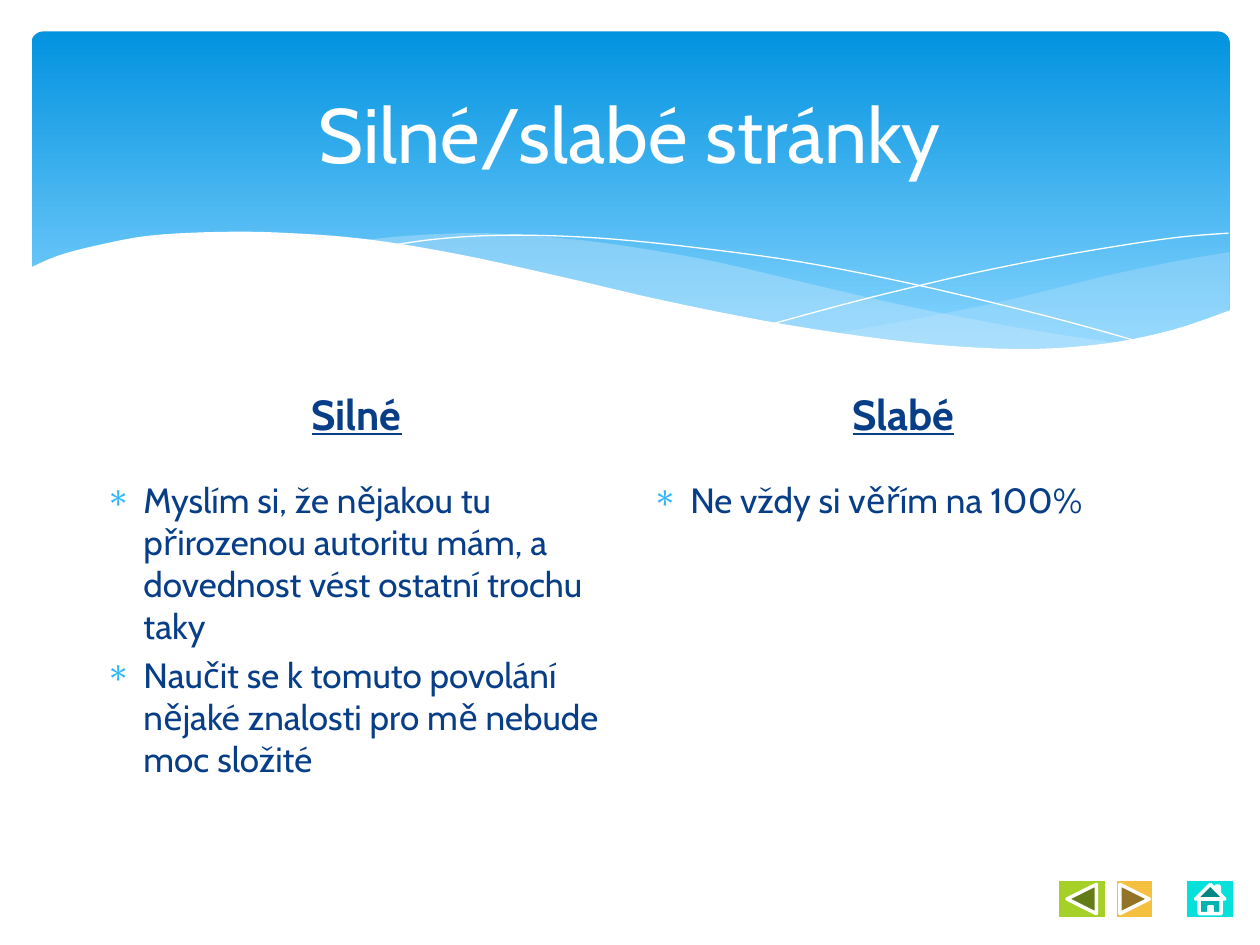
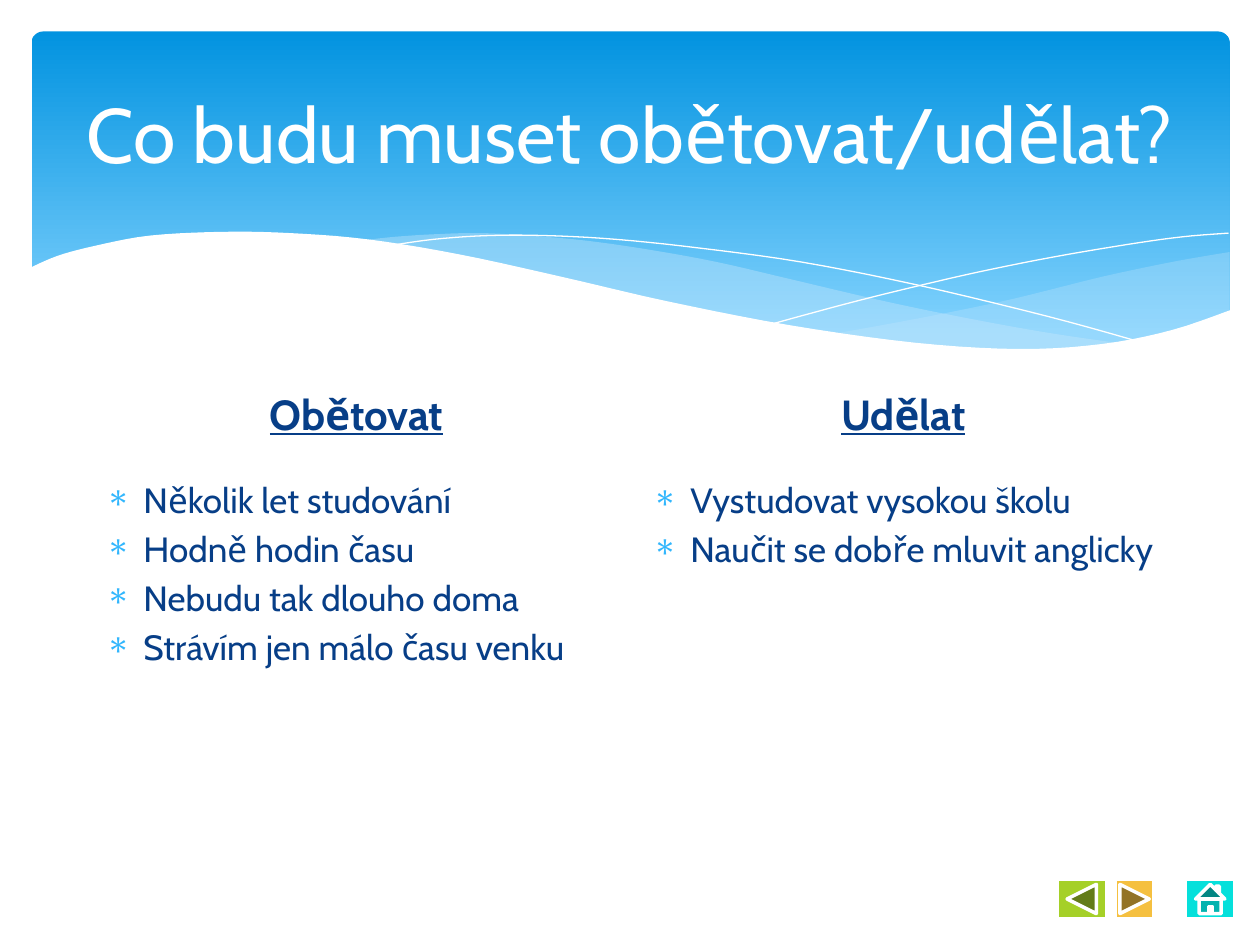
"""Build two slides that weigh a career choice in two columns under a wave banner."""
from dataclasses import dataclass
from typing import Iterator

from lxml import etree
from pptx import Presentation
from pptx import util as u
from pptx.dml.color import RGBColor
from pptx.enum import shapes, text
from pptx.oxml import ns
from pptx.shapes.autoshape import Shape
from pptx.slide import Slide
from pptx.text.text import TextFrame, _Paragraph

FONT = "Cabin"
WHITE = "FFFFFF"
NAVY = "073E87"
BULLET = "31B6FD"
BANNER_TOP = "0293E0"
BANNER_BOTTOM = "83D3FE"
PALE_BLUE = "C6E7FC"

COLUMN_LEFTS = (0.74, 5.08)
COLUMN_WIDTH = 4.18
BULLET_INDENT = 0.3
CURVE_STEPS = 5

Point = tuple[float, float]
Curve = tuple[Point, ...]


@dataclass(frozen=True)
class Wave:
    """A filled outline made of smooth curves joined end to end."""
    curves: tuple[Curve, ...]
    color: str
    opacity: int


@dataclass(frozen=True)
class NavigationButton:
    """An action button in the bottom right corner."""
    kind: shapes.MSO_SHAPE
    left: float
    width: float
    color: str


@dataclass(frozen=True)
class Column:
    """A heading with its bulleted points."""
    heading: str
    points: tuple[str, ...]


@dataclass(frozen=True)
class Comparison:
    """The content of one slide."""
    title: str
    columns: tuple[Column, Column]


RIGHT_WAVE = Wave((
    ((9.76, 2), (9.35, 2.07), (8.91, 2.16), (8.61, 2.23), (8.05, 2.37),
     (7.53, 2.48), (7.06, 2.57), (6.61, 2.65)),
    ((6.61, 2.65), (7.05, 2.71), (7.45, 2.75), (7.81, 2.77), (8.14, 2.78),
     (8.54, 2.76), (8.89, 2.72), (9.21, 2.65), (9.49, 2.57), (9.76, 2.47)),
), PALE_BLUE, 29)

MIDDLE_WAVE = Wave((
    ((8.93, 2.73), (8.37, 2.65), (7.75, 2.54), (7.06, 2.4), (6.29, 2.22),
     (5.69, 2.08), (5.14, 1.98), (4.65, 1.91), (4.2, 1.87), (3.8, 1.85),
     (3.44, 1.86), (3.13, 1.88), (2.86, 1.91)),
    ((2.86, 1.91), (3.42, 1.99), (4.04, 2.11), (4.49, 2.22), (5.3, 2.4),
     (6.01, 2.55), (6.65, 2.66), (7.22, 2.74), (7.73, 2.77), (8.18, 2.78),
     (8.57, 2.77), (8.93, 2.73)),
), PALE_BLUE, 40)

BOTTOM_WAVE = Wave((
    ((9.77, 2.46), (9.3, 2.62), (8.75, 2.73), (8.09, 2.77), (7.26, 2.72),
     (6.26, 2.58), (5.29, 2.39), (4.47, 2.2), (3.65, 2.02), (2.92, 1.9),
     (2.3, 1.85), (1.77, 1.84), (1.19, 1.87), (0.76, 1.95), (0.46, 2.03),
     (0.23, 2.13)),
    ((0.23, 3.29), (9.77, 3.29)),
), WHITE, 100)

FALLING_LINE = ((3.09, 1.95), (3.44, 1.9), (3.87, 1.87), (4.33, 1.87), (4.89, 1.9),
                (5.56, 1.97), (6.36, 2.08), (7.27, 2.26), (8.31, 2.51), (9.07, 2.72))
RISING_LINE = ((6.13, 2.57), (6.72, 2.41), (7.2, 2.29), (7.76, 2.16), (8.36, 2.04),
               (8.95, 1.94), (9.38, 1.88), (9.75, 1.85))

BUTTONS = (
    NavigationButton(shapes.MSO_SHAPE.ACTION_BUTTON_BACK_OR_PREVIOUS, 8.39, 0.39, "A5D028"),
    NavigationButton(shapes.MSO_SHAPE.ACTION_BUTTON_FORWARD_OR_NEXT, 8.85, 0.31, "F5C040"),
    NavigationButton(shapes.MSO_SHAPE.ACTION_BUTTON_HOME, 9.41, 0.39, "05E0DB"),
)

COMPARISONS = (
    Comparison("Silné/slabé stránky", (
        Column("Silné", (
            "Myslím si, že nějakou tu přirozenou autoritu mám, a dovednost vést "
            "ostatní trochu taky",
            "Naučit se k tomuto povolání nějaké znalosti pro mě nebude moc složité",
        )),
        Column("Slabé", ("Ne vždy si věřím na 100%",)),
    )),
    Comparison("Co budu muset obětovat/udělat?", (
        Column("Obětovat", (
            "Několik let studování",
            "Hodně hodin času",
            "Nebudu tak dlouho doma",
            "Strávím jen málo času venku",
        )),
        Column("Udělat", ("Vystudovat vysokou školu", "Naučit se dobře mluvit anglicky")),
    )),
)


def rgb(color: str) -> RGBColor:
    """Turn a hex string into a colour."""
    return RGBColor.from_string(color)


def smooth(curve: Curve) -> Iterator[Point]:
    """Yield points of a Catmull-Rom spline through the curve."""
    padded = (curve[0], *curve, curve[-1])
    yield curve[0]
    for before, start, end, after in zip(padded, padded[1:], padded[2:], padded[3:]):
        for step in range(1, CURVE_STEPS + 1):
            t = step / CURVE_STEPS
            x, y = (
                (2 * b + (c - a) * t + (2 * a - 5 * b + 4 * c - d) * t ** 2
                 + (3 * b - a - 3 * c + d) * t ** 3) / 2
                for a, b, c, d in zip(before, start, end, after)
            )
            yield x, y


def add_outline(slide: Slide, curves: tuple[Curve, ...], close: bool) -> Shape:
    """Add a freeform that follows the smoothed curves."""
    start, *rest = [
        (u.Inches(x), u.Inches(y)) for curve in curves for x, y in smooth(curve)
    ]
    builder = slide.shapes.build_freeform(*start)
    builder.add_line_segments(rest, close=close)
    shape = builder.convert_to_shape()
    shape.shadow.inherit = False
    return shape


def add_wave(slide: Slide, wave: Wave) -> None:
    """Add a filled wave with its opacity."""
    shape = add_outline(slide, wave.curves, True)
    shape.fill.solid()
    shape.fill.fore_color.rgb = rgb(wave.color)
    shape.line.fill.background()
    if wave.opacity < 100:
        color = shape.element.spPr.find(".//" + ns.qn("a:srgbClr"))
        etree.SubElement(color, ns.qn("a:alpha"), val=str(wave.opacity * 1000))


def add_hairline(slide: Slide, curve: Curve) -> None:
    """Add a thin white curve."""
    shape = add_outline(slide, (curve,), False)
    shape.fill.background()
    shape.line.color.rgb = rgb(WHITE)
    shape.line.width = u.Pt(0)


def add_banner(slide: Slide) -> None:
    """Add the gradient band with its waves."""
    band = slide.shapes.add_shape(
        shapes.MSO_SHAPE.ROUNDED_RECTANGLE,
        u.Inches(0.25), u.Inches(0.25), u.Inches(9.51), u.Inches(2.7))
    band.adjustments[0] = 0.034
    band.shadow.inherit = False
    band.line.fill.background()
    band.fill.gradient()
    band.fill.gradient_angle = 270
    stops = ((0, BANNER_TOP), (0.9, BANNER_BOTTOM))
    for stop, (position, color) in zip(band.fill.gradient_stops, stops):
        stop.position = position
        stop.color.rgb = rgb(color)
    add_wave(slide, RIGHT_WAVE)
    add_wave(slide, MIDDLE_WAVE)
    add_hairline(slide, FALLING_LINE)
    add_hairline(slide, RISING_LINE)
    add_wave(slide, BOTTOM_WAVE)


def add_text_frame(slide: Slide, left: float, top: float, width: float, height: float,
                   anchor: text.MSO_ANCHOR) -> TextFrame:
    """Add a wrapping text box and return its frame."""
    box = slide.shapes.add_textbox(
        u.Inches(left), u.Inches(top), u.Inches(width), u.Inches(height))
    frame = box.text_frame
    frame.word_wrap = True
    frame.vertical_anchor = anchor
    return frame


def write(paragraph: _Paragraph, words: str, size: int, color: str) -> None:
    """Put words in a paragraph and set its font."""
    paragraph.text = words
    paragraph.font.name = FONT
    paragraph.font.size = u.Pt(size)
    paragraph.font.color.rgb = rgb(color)


def add_bullet(paragraph: _Paragraph) -> None:
    """Give a paragraph a hanging coloured asterisk."""
    properties = paragraph._p.get_or_add_pPr()
    indent = u.Inches(BULLET_INDENT)
    properties.set("marL", str(indent))
    properties.set("indent", str(-indent))
    color = etree.SubElement(properties, ns.qn("a:buClr"))
    etree.SubElement(color, ns.qn("a:srgbClr"), val=BULLET)
    etree.SubElement(properties, ns.qn("a:buChar"), char="∗")


def add_title(slide: Slide, title: str) -> None:
    """Add the centred title on the banner."""
    frame = add_text_frame(slide, 0.5, 0.37, 9, 1.37, text.MSO_ANCHOR.MIDDLE)
    paragraph = frame.paragraphs[0]
    paragraph.alignment = text.PP_ALIGN.CENTER
    write(paragraph, title, 44, WHITE)


def add_column(slide: Slide, column: Column, left: float) -> None:
    """Add a column heading and the points below it."""
    frame = add_text_frame(slide, left, 2.93, COLUMN_WIDTH, 0.7, text.MSO_ANCHOR.MIDDLE)
    heading = frame.paragraphs[0]
    heading.alignment = text.PP_ALIGN.CENTER
    heading.space_before = u.Pt(4.8)
    write(heading, column.heading, 24, NAVY)
    heading.font.bold = True
    heading.font.underline = True

    frame = add_text_frame(slide, left, 3.75, COLUMN_WIDTH, 2.95, text.MSO_ANCHOR.TOP)
    for index, point in enumerate(column.points):
        paragraph = frame.add_paragraph() if index else frame.paragraphs[0]
        add_bullet(paragraph)
        paragraph.space_before = u.Pt(4)
        write(paragraph, point, 20, NAVY)


def add_button(slide: Slide, button: NavigationButton) -> None:
    """Add one navigation button."""
    shape = slide.shapes.add_shape(
        button.kind, u.Inches(button.left), u.Inches(6.98),
        u.Inches(button.width), u.Inches(0.31))
    shape.shadow.inherit = False
    shape.fill.solid()
    shape.fill.fore_color.rgb = rgb(button.color)
    shape.line.color.rgb = rgb(WHITE)
    shape.line.width = u.Pt(2)


def main() -> None:
    """Build and save the presentation."""
    presentation = Presentation()
    presentation.slide_width = u.Inches(10)
    presentation.slide_height = u.Inches(7.5)
    for comparison in COMPARISONS:
        slide = presentation.slides.add_slide(presentation.slide_layouts[6])
        add_banner(slide)
        add_title(slide, comparison.title)
        for column, left in zip(comparison.columns, COLUMN_LEFTS):
            add_column(slide, column, left)
        for button in BUTTONS:
            add_button(slide, button)
    presentation.save("out.pptx")


if __name__ == "__main__":
    main()
